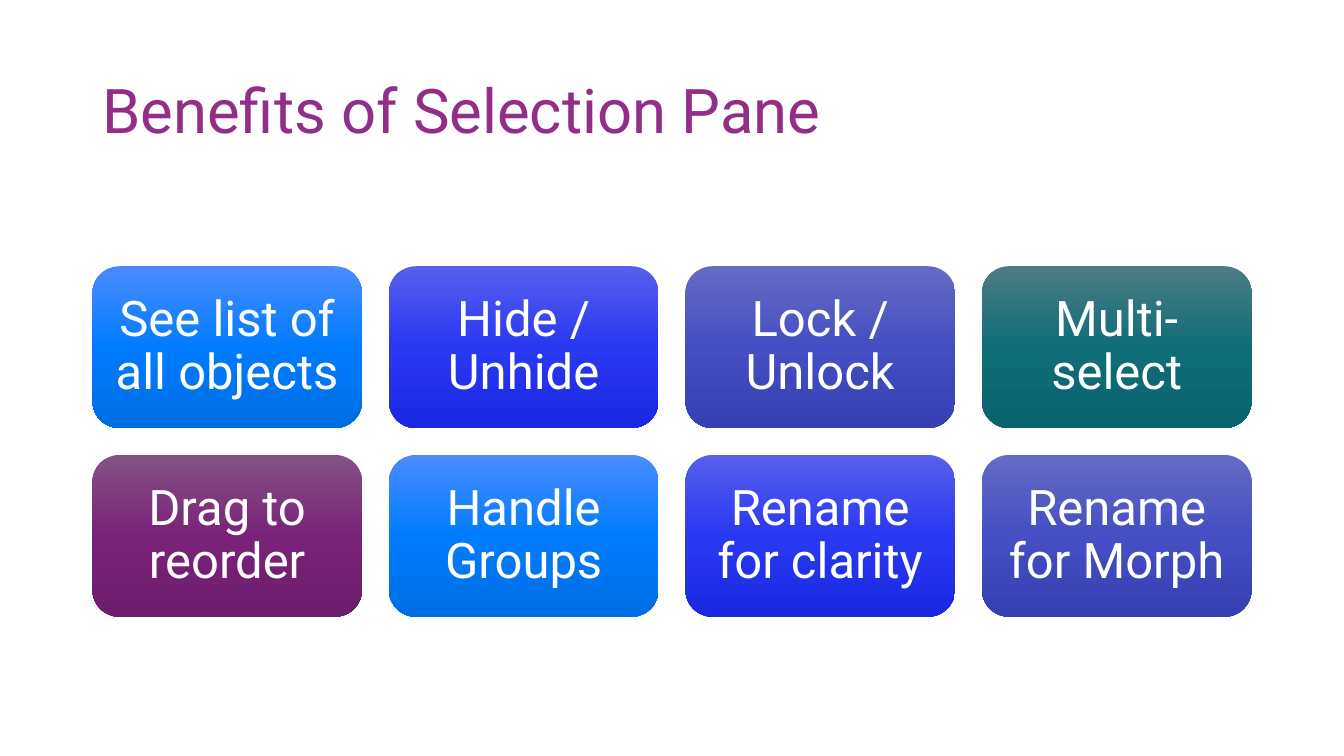
from copy import deepcopy
from dataclasses import dataclass

from pptx import Presentation
from pptx.dml.color import RGBColor as Rgb
from pptx.enum.shapes import MSO_SHAPE as Shape
from pptx.enum.text import MSO_ANCHOR as Anchor, PP_ALIGN as Align
from pptx.util import Cm, Pt


@dataclass(frozen=True)
class Theme:
    font: str = "Roboto"
    title: str = "922D88"
    white: str = "FFFFFF"
    big: int = 44
    mid: int = 35
    # Top, middle and bottom colour of each card style
    cards: tuple = (
        ("4B8BFF", "007CFF", "006EE3"),
        ("575FEC", "2938F1", "1A29E1"),
        ("656BC4", "454EC2", "3740B2"),
        ("4C7C84", "0F6D77", "09646E"),
        ("855185", "782378", "6E1C6E"),
    )


def apply(item, **values):
    for name, value in values.items():
        setattr(item, name, value)


class Deck:
    def __init__(self, theme):
        self.theme = theme
        self.file = Presentation()
        apply(self.file, slide_width=Cm(33.87), slide_height=Cm(19.05))
        self.slide = self.file.slides.add_slide(self.file.slide_layouts[6])

    def label(self, shape, text, size, color, align, inset):
        frame = shape.text_frame
        apply(frame, word_wrap=True, vertical_anchor=Anchor.MIDDLE)
        apply(frame, **{f"margin_{side}": Cm(inset)
                        for side in ("left", "top", "right", "bottom")})
        para = frame.paragraphs[0]
        apply(para, text=text, alignment=align, line_spacing=0.9)
        font = para.runs[0].font
        apply(font, name=self.theme.font, size=Pt(size))
        font.color.rgb = Rgb.from_string(color)

    def title(self, text, *box):
        shape = self.slide.shapes.add_textbox(*map(Cm, box))
        look = self.theme
        self.label(shape, text, look.big, look.title, Align.LEFT, 0.25)

    def card(self, text, tones, *box):
        shape = self.slide.shapes.add_shape(
            Shape.ROUNDED_RECTANGLE, *map(Cm, box))
        shape.shadow.inherit = False
        shape.line.fill.background()
        self.shade(shape, tones)
        look = self.theme
        self.label(shape, text, look.mid, look.white, Align.CENTER, 0.38)

    def shade(self, shape, tones):
        fill = shape.fill
        fill.gradient()
        fill.gradient_angle = 270
        # The default gradient has two stops; add the middle one
        first = shape.element.xpath(".//a:gs")[0]
        first.addnext(deepcopy(first))
        for stop, tone, place in zip(fill.gradient_stops, tones, (0, 0.5, 1)):
            stop.color.rgb = Rgb.from_string(tone)
            stop.position = place


LABELS = (
    "See list of all objects", "Hide / Unhide", "Lock / Unlock",
    "Multi-select", "Drag to reorder", "Handle Groups",
    "Rename for clarity", "Rename for Morph",
)
COLS = 4
LEFT, TOP, WIDTH = 2.33, 6.71, 29.21


def main():
    theme = Theme()
    deck = Deck(theme)

    # Heading
    deck.title("Benefits of Selection Pane", LEFT, 1.01, WIDTH, 3.68)

    # Grid of cards, with gaps of a tenth of a card's width
    wide = WIDTH / (COLS + 0.1 * (COLS - 1))
    high, gap = 0.6 * wide, 0.1 * wide
    for index, text in enumerate(LABELS):
        row, col = divmod(index, COLS)
        tones = theme.cards[index % len(theme.cards)]
        deck.card(text, tones, LEFT + col * (wide + gap),
                  TOP + row * (high + gap), wide, high)

    deck.file.save("out.pptx")


if __name__ == "__main__":
    main()
